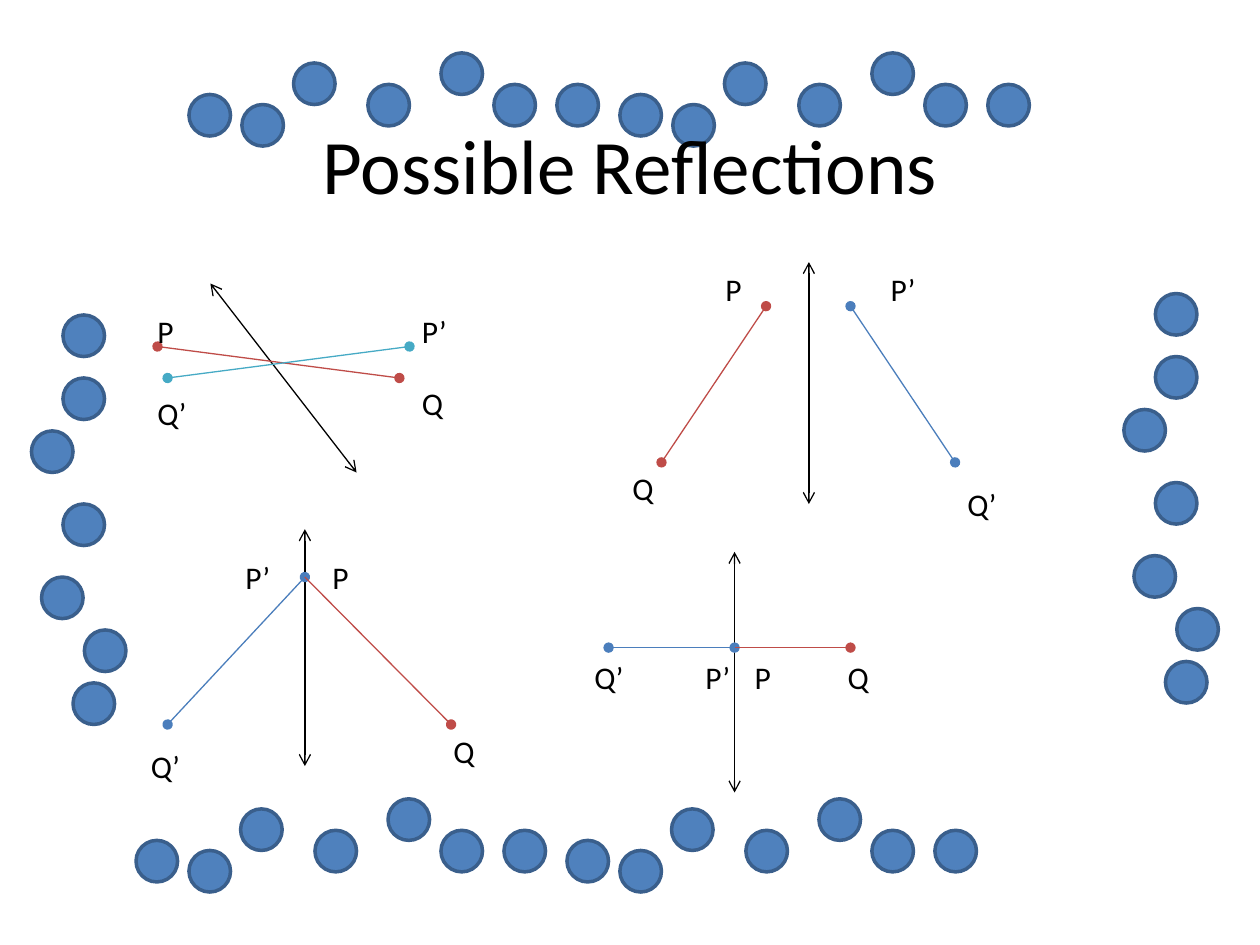
import pptx
import pptx.dml.color
import pptx.enum.shapes
import pptx.enum.text
import pptx.oxml.ns
import pptx.util
from lxml import etree

Inches = pptx.util.Inches
Pt = pptx.util.Pt
qn = pptx.oxml.ns.qn

BLACK, RED, BLUE, TEAL = "000000", "BF4C48", "4B7EBC", "46AAC5"
LABEL_WIDTHS = {"P": 0.33, "Q": 0.33, "P’": 0.4, "Q’": 0.44}


def color(hex_code):
    return pptx.dml.color.RGBColor.from_string(hex_code)


class ReflectionSlide:
    font = "Calibri"
    dot_size = 0.33
    dot_fill = "4F81BD"
    dot_edge = "3A5F8C"

    def __init__(self, slide):
        self.shapes = slide.shapes

    def dots(self, pattern, dx=0, dy=0):
        for x, y in pattern:
            dot = self.shapes.add_shape(
                pptx.enum.shapes.MSO_SHAPE.OVAL, Inches(x + dx), Inches(y + dy),
                Inches(self.dot_size), Inches(self.dot_size))
            dot.shadow.inherit = False
            dot.fill.solid()
            dot.fill.fore_color.rgb = color(self.dot_fill)
            dot.line.color.rgb = color(self.dot_edge)
            dot.line.width = Pt(2)

    def text(self, words, x, y, width, height, size, wrap=False):
        box = self.shapes.add_textbox(Inches(x), Inches(y), Inches(width), Inches(height))
        frame = box.text_frame
        frame.text = words
        frame.word_wrap = wrap
        font = frame.paragraphs[0].runs[0].font
        font.name = self.font
        font.size = Pt(size)
        font.color.rgb = color(BLACK)
        return frame

    def title(self, words):
        frame = self.text(words, 0.5, 0.67, 9, 1.25, 44, wrap=True)
        frame.vertical_anchor = pptx.enum.text.MSO_ANCHOR.MIDDLE
        frame.paragraphs[0].alignment = pptx.enum.text.PP_ALIGN.CENTER

    def label(self, words, x, y):
        self.text(words, x, y, LABEL_WIDTHS[words], 0.4, 18)

    def line(self, start, end, hex_code, head, tail):
        connector = self.shapes.add_connector(
            pptx.enum.shapes.MSO_CONNECTOR.STRAIGHT,
            *(Inches(value) for value in start + end))
        connector.line.color.rgb = color(hex_code)
        connector.line.width = Pt(0.75)
        properties = connector._element.spPr
        outline = properties.find(qn("a:ln"))
        for tag, kind in (("a:headEnd", head), ("a:tailEnd", tail)):
            if kind:
                etree.SubElement(outline, qn(tag)).set("type", kind)
        etree.SubElement(properties, qn("a:effectLst"))

    def mirror(self, start, end):
        self.line(start, end, BLACK, "arrow", "arrow")

    def segment(self, start, end, hex_code, head="oval"):
        self.line(start, end, hex_code, head, "oval")


def main():
    deck = pptx.Presentation()
    deck.slide_width, deck.slide_height = Inches(10), Inches(7.5)
    page = ReflectionSlide(deck.slides.add_slide(deck.slide_layouts[6]))

    column = [(0.5, 2.5), (0.5, 3), (0.25, 3.42), (0.5, 4),
              (0.33, 4.58), (0.67, 5), (0.58, 5.42)]
    wave = [(1.5, 0.75), (1.92, 0.83), (2.33, 0.5), (2.92, 0.67),
            (3.5, 0.42), (3.92, 0.67), (4.42, 0.67)]
    wave_length = 3.42
    page.dots(column, 8.67, -0.17)
    page.dots(column)
    for dx, dy in ((0, 0), (-0.42, 5.92)):
        for repeat in range(2):
            page.dots(wave, dx + repeat * wave_length, dy)

    page.title("Possible Reflections")

    crossing = {
        "mirror": ((1.67, 2.25), (2.83, 3.75)),
        "segments": [((1.25, 2.75), (3.17, 3), RED), ((1.33, 3), (3.25, 2.75), TEAL)],
        "labels": [("P", 1.15, 2.43), ("Q", 3.25, 3), ("Q’", 1.15, 3.08), ("P’", 3.25, 2.43)],
    }
    apart = {
        "mirror": ((6.42, 2.08), (6.42, 4)),
        "segments": [((6.75, 2.43), (7.58, 3.67), BLUE), ((5.25, 3.67), (6.08, 2.43), RED)],
        "labels": [("P", 5.66, 2.09), ("Q", 4.92, 3.67), ("P’", 6.97, 2.09), ("Q’", 7.58, 3.8)],
    }
    shared_endpoint = {
        "mirror": ((2.42, 4.2), (2.42, 6.08)),
        "segments": [((2.42, 4.58), (1.33, 5.75), BLUE), ((2.42, 4.58), (3.58, 5.75), RED, None)],
        "labels": [("Q’", 1.1, 5.88), ("P’", 1.85, 4.38), ("P", 2.54, 4.38), ("Q", 3.5, 5.76)],
    }
    perpendicular = {
        "mirror": ((5.83, 4.38), (5.83, 6.29)),
        "segments": [((5.83, 5.14), (4.83, 5.14), BLUE), ((5.83, 5.14), (6.75, 5.14), RED, None)],
        "labels": [("Q", 6.63, 5.17), ("P", 5.89, 5.17), ("P’", 5.5, 5.17), ("Q’", 4.62, 5.17)],
    }
    for reflection in (crossing, apart, shared_endpoint, perpendicular):
        page.mirror(*reflection["mirror"])
        for segment in reflection["segments"]:
            page.segment(*segment)
        for label in reflection["labels"]:
            page.label(*label)

    deck.save("out.pptx")


if __name__ == "__main__":
    main()
